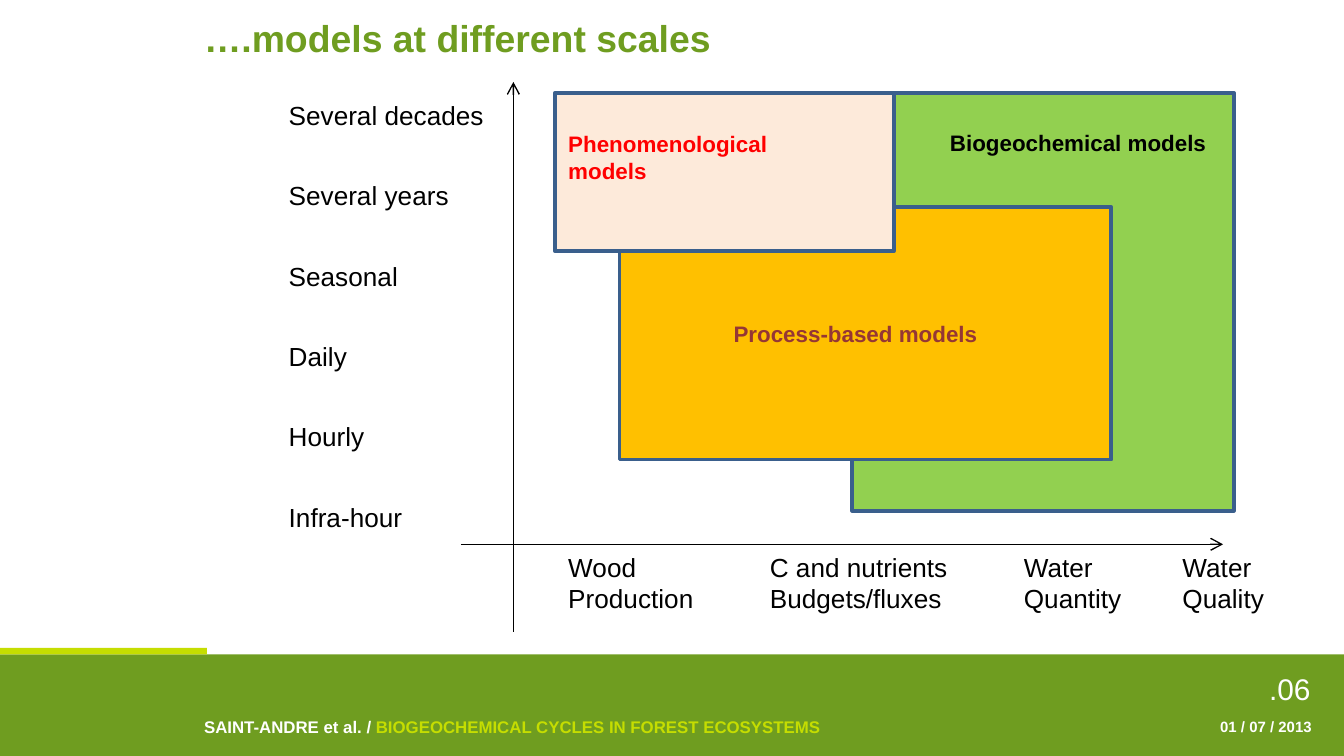
from lxml.etree import SubElement
from pptx import Presentation
from pptx.dml.color import RGBColor
from pptx.enum.shapes import MSO_CONNECTOR, MSO_SHAPE
from pptx.enum.text import MSO_ANCHOR, PP_ALIGN
from pptx.oxml.ns import qn
from pptx.util import Inches, Pt

COLUMNS, ROWS = 100, 56.25
CELL = Inches(0.1)
BLACK, WHITE, GREEN, LIME = "000000", "FFFFFF", "6F9D20", "C5DD01"
OUTLINE = "3A5F8C"
SCALE_LEFT, SCALE_TOP, SCALE_STEP = 20.5, 6.9, 5.98
TIME_SCALES = ["Several decades", "Several years", "Seasonal", "Daily", "Hourly", "Infra-hour"]
OUTPUT_TOP = 40.5
OUTPUTS = [
    (41.3, 12.6, ["Wood Production"]),
    (56.3, 17.7, ["C and nutrients", "Budgets/fluxes"]),
    (75.2, 9.4, ["Water Quantity"]),
    (87, 9.4, ["Water Quality"]),
]
MODELS = [
    ((63.4, 6.9, 28.4, 31.1), "92D050", (69.7, 9.1, 21.3, 3), "Biogeochemical models", BLACK),
    ((46.1, 15.4, 36.6, 18.8), "FFC000", (53.6, 23.3, 26, 3), "Process-based models", "953735"),
    ((41.3, 6.9, 25.2, 11.8), "FDEADA", (41.3, 9.2, 22, 5), "Phenomenological models", "FF0000"),
]


def cells(*counts):
    """Turn counts of grid cells into slide lengths."""
    return [round(count * CELL) for count in counts]


def colour(hex_code):
    """Turn a hex string into a colour."""
    return RGBColor.from_string(hex_code)


def add_block(slide, area, fill, outline=None):
    """Draw a filled rectangle, with an outline if one is given."""
    block = slide.shapes.add_shape(MSO_SHAPE.RECTANGLE, *cells(*area))
    block.shadow.inherit = False
    block.fill.solid()
    block.fill.fore_color.rgb = colour(fill)
    if outline:
        block.line.color.rgb = colour(outline)
        block.line.width = Pt(2)
    else:
        block.line.fill.background()
    return block


def write(frame, paragraphs, size, bold=False, align=PP_ALIGN.LEFT):
    """Fill a text frame with paragraphs of (text, colour) runs."""
    frame.word_wrap = True
    for index, runs in enumerate(paragraphs):
        paragraph = frame.paragraphs[0] if index == 0 else frame.add_paragraph()
        paragraph.alignment = align
        for text, ink in runs:
            run = paragraph.add_run()
            run.text = text
            run.font.name = "Arial"
            run.font.size = Pt(size)
            run.font.bold = bold
            run.font.color.rgb = colour(ink)


def add_label(slide, area, paragraphs, size, bold=False, align=PP_ALIGN.LEFT):
    """Place a text box on the grid."""
    label = slide.shapes.add_textbox(*cells(*area))
    write(label.text_frame, paragraphs, size, bold, align)


def add_axis(slide, start, end):
    """Draw an axis with an open arrowhead at its end."""
    axis = slide.shapes.add_connector(MSO_CONNECTOR.STRAIGHT, *cells(*start, *end))
    axis.line.color.rgb = colour(BLACK)
    axis.line.width = Pt(0.75)
    SubElement(axis.line._get_or_add_ln(), qn("a:tailEnd"), type="arrow")
    SubElement(axis._element.spPr, qn("a:effectLst"))


def add_title(slide):
    """Place the title on its white band."""
    title = add_block(slide, (14.2, 0.6, 83, 4.4), WHITE)
    title.text_frame.vertical_anchor = MSO_ANCHOR.MIDDLE
    write(title.text_frame, [[("….models at different scales", GREEN)]], 20, True)


def add_footer(slide):
    """Draw the footer band with page number, authors and date."""
    add_block(slide, (0, 48.7, COLUMNS, ROWS - 48.7), GREEN)
    add_block(slide, (0, 48.2, 15.4, 0.5), LIME)
    add_label(slide, (86.2, 49.4, 12.3, 2.7), [[(".06", WHITE)]], 16, align=PP_ALIGN.RIGHT)
    credit = [("SAINT-ANDRE et al. / ", WHITE), ("BIOGEOCHEMICAL CYCLES IN FOREST ECOSYSTEMS", LIME)]
    add_label(slide, (14.2, 52.8, 51.5, 2.5), [credit], 9, True)
    add_label(slide, (77.8, 52.9, 20.8, 2.4), [[("01 / 07 / 2013", WHITE)]], 8, True, PP_ALIGN.RIGHT)


def add_models(slide):
    """Draw the overlapping model ranges, then their names on top."""
    for area, fill, *_ in MODELS:
        add_block(slide, area, fill, OUTLINE)
    for _, _, name_area, name, ink in MODELS:
        add_label(slide, name_area, [[(name, ink)]], 12, True)


def add_axes(slide):
    """Draw both axes and their labels."""
    add_axis(slide, (38.2, 47), (38.2, 6.1))
    add_axis(slide, (34.3, 40.5), (91, 40.5))
    for step, scale in enumerate(TIME_SCALES):
        top = SCALE_TOP + step * SCALE_STEP
        add_label(slide, (SCALE_LEFT, top, 21, 3.4), [[(scale, BLACK)]], 14)
    for left, width, lines in OUTPUTS:
        paragraphs = [[(line, BLACK)] for line in lines]
        add_label(slide, (left, OUTPUT_TOP, width, 5.7), paragraphs, 14)


def main():
    """Build and save the slide."""
    presentation = Presentation()
    presentation.slide_width, presentation.slide_height = cells(COLUMNS, ROWS)
    slide = presentation.slides.add_slide(presentation.slide_layouts[6])
    add_footer(slide)
    add_title(slide)
    add_models(slide)
    add_axes(slide)
    presentation.save("out.pptx")


if __name__ == "__main__":
    main()
